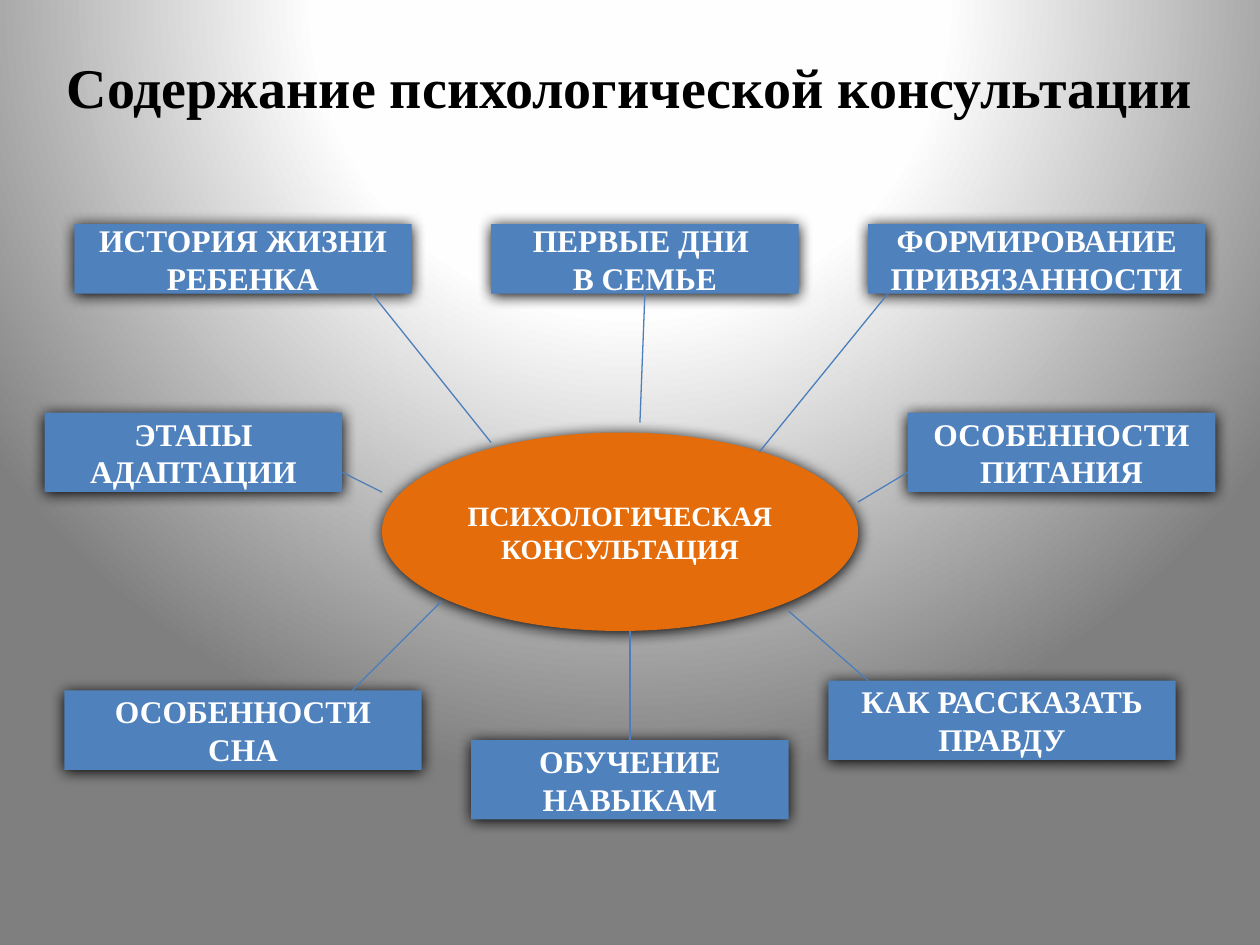
from lxml import etree
from pptx import Presentation
from pptx.dml.color import RGBColor
from pptx.enum.shapes import MSO_CONNECTOR, MSO_SHAPE
from pptx.enum.text import MSO_ANCHOR, PP_ALIGN
from pptx.oxml import parse_xml
from pptx.oxml.ns import nsdecls, qn
from pptx.util import Cm, Pt

RECT, OVAL = MSO_SHAPE.RECTANGLE, MSO_SHAPE.OVAL
STRAIGHT = MSO_CONNECTOR.STRAIGHT
CENTER, MIDDLE = PP_ALIGN.CENTER, MSO_ANCHOR.MIDDLE

COLORS = {
    "text": "000000",
    "light": "FFFFFF",
    "topic": "4F81BD",
    "center": "E46C0A",
    "line": "4B7EBC",
    "shadow": "000000",
}
BACKGROUND_STOPS = [(0, "FFFFFF"), (40, "FEFEFE"), (100, "7F7F7F")]

TOPICS = [
    (["ИСТОРИЯ ЖИЗНИ РЕБЕНКА"], 1.5, 4.52, 6.8, 1.4),
    (["ПЕРВЫЕ ДНИ ", "В СЕМЬЕ"], 9.9, 4.52, 6.2, 1.4),
    (["ФОРМИРОВАНИЕ ПРИВЯЗАННОСТИ"], 17.5, 4.52, 6.8, 1.4),
    (["ЭТАПЫ АДАПТАЦИИ"], 0.9, 8.32, 6, 1.6),
    (["ОСОБЕННОСТИ СНА"], 1.3, 13.92, 7.2, 1.6),
    (["ОСОБЕННОСТИ ПИТАНИЯ"], 18.3, 8.32, 6.2, 1.6),
    (["КАК РАССКАЗАТЬ ПРАВДУ"], 16.7, 13.72, 7, 1.6),
    (["ОБУЧЕНИЕ НАВЫКАМ"], 9.5, 14.92, 6.4, 1.6),
]
LINKS = [
    (7.5, 5.92, 9.9, 8.92),
    (13, 5.92, 12.9, 8.52),
    (17.9, 5.92, 15.3, 9.12),
    (6.9, 9.52, 7.7, 9.92),
    (18.3, 9.52, 17.3, 10.12),
    (7.1, 13.92, 8.9, 12.12),
    (17.5, 13.72, 15.9, 12.32),
    (12.7, 12.72, 12.7, 14.92),
]


class Deck:
    font = "Times New Roman"

    def __init__(self, prs):
        self.s = prs.slides.add_slide(prs.slide_layouts[5])

    def color(self, name):
        return RGBColor.from_string(COLORS[name])

    def background(self, stops):
        gs = "".join(
            f'<a:gs pos="{pos * 1000}"><a:srgbClr val="{color}"/></a:gs>'
            for pos, color in stops
        )
        bg = parse_xml(
            f'<p:bg {nsdecls("p", "a")}><p:bgPr><a:gradFill rotWithShape="1">'
            f'<a:gsLst>{gs}</a:gsLst><a:path path="circle">'
            '<a:fillToRect l="50000" t="-80000" r="50000" b="180000"/>'
            "</a:path></a:gradFill><a:effectLst/></p:bgPr></p:bg>"
        )
        self.s.element.cSld.insert(0, bg)

    def add_text(self, sp, paragraphs, size, color):
        tf = sp.text_frame
        tf.word_wrap = True
        tf.vertical_anchor = MIDDLE
        for i, text in enumerate(paragraphs):
            p = tf.add_paragraph() if i else tf.paragraphs[0]
            p.alignment = CENTER
            r = p.add_run()
            r.text = text
            r.font.name = self.font
            r.font.size = Pt(size)
            r.font.bold = True
            r.font.color.rgb = self.color(color)

    def title(self, text, x, y, w, h):
        sp = self.s.shapes.title
        sp.left, sp.top, sp.width, sp.height = Cm(x), Cm(y), Cm(w), Cm(h)
        self.add_text(sp, [text], 32, "text")

    def shadow(self, sp):
        sp.shadow.inherit = False
        effects = sp.element.spPr.find(qn("a:effectLst"))
        outer = etree.SubElement(
            effects, qn("a:outerShdw"), blurRad=str(Pt(8.5)), dist=str(Pt(1)),
            dir="5400000", algn="ctr", rotWithShape="0",
        )
        etree.SubElement(outer, qn("a:srgbClr"), val=COLORS["shadow"])

    def box(self, kind, paragraphs, x, y, w, h, fill, size):
        sp = self.s.shapes.add_shape(kind, Cm(x), Cm(y), Cm(w), Cm(h))
        sp.fill.solid()
        sp.fill.fore_color.rgb = self.color(fill)
        sp.line.fill.background()
        self.shadow(sp)
        self.add_text(sp, paragraphs, size, "light")

    def link(self, x1, y1, x2, y2):
        line = self.s.shapes.add_connector(STRAIGHT, Cm(x1), Cm(y1), Cm(x2), Cm(y2))
        line.line.color.rgb = self.color("line")
        line.line.width = Pt(0.75)
        etree.SubElement(line.element.spPr, qn("a:effectLst"))


def main():
    prs = Presentation()
    prs.slide_width, prs.slide_height = Cm(25.4), Cm(19.05)
    deck = Deck(prs)
    deck.background(BACKGROUND_STOPS)
    deck.title("Содержание психологической консультации", 0.9, 0.74, 23.6, 2)
    deck.box(OVAL, ["ПСИХОЛОГИЧЕСКАЯ КОНСУЛЬТАЦИЯ"], 7.7, 8.72, 9.6, 4, "center", 16)
    for paragraphs, x, y, w, h in TOPICS:
        deck.box(RECT, paragraphs, x, y, w, h, "topic", 18)
    for ends in LINKS:
        deck.link(*ends)
    prs.save("out.pptx")


if __name__ == "__main__":
    main()
